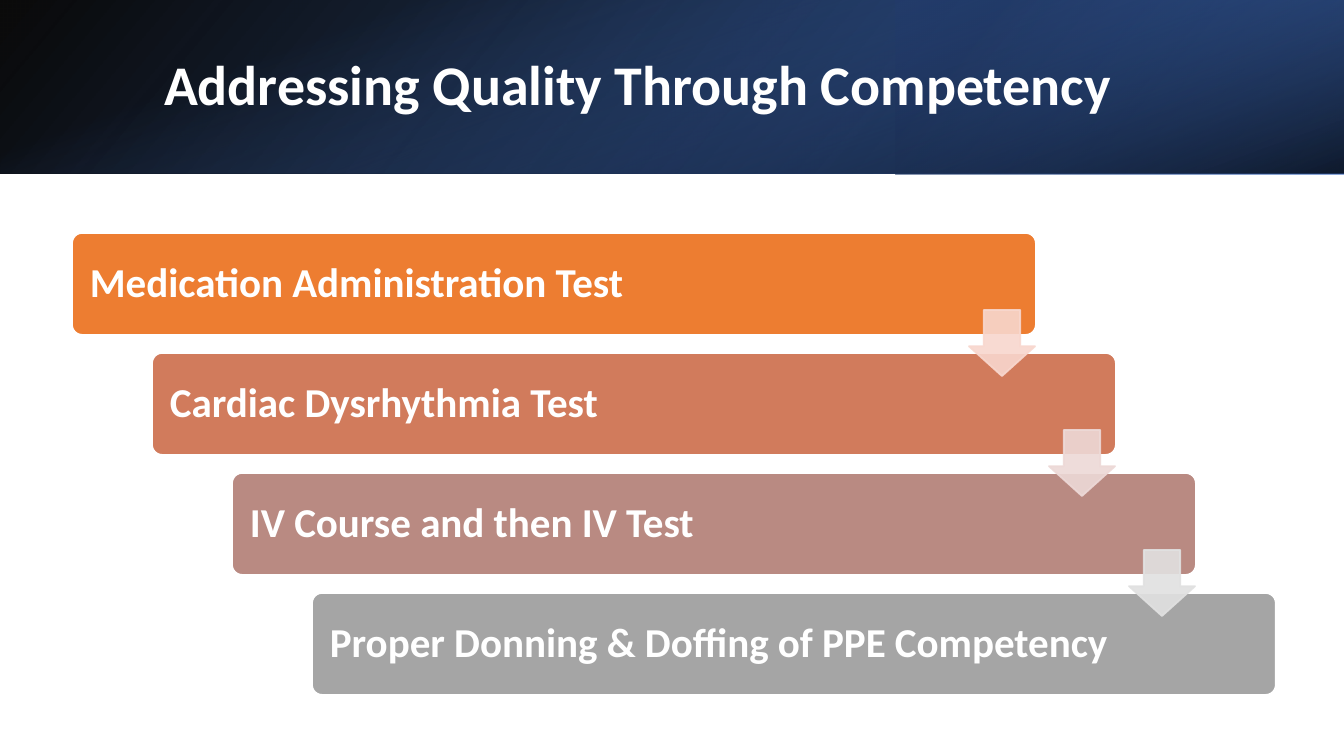
"""Build the slide on quality through competency: a gradient header and four stepped bars."""
from lxml.etree import SubElement
from pptx import Presentation
from pptx.dml.color import RGBColor
from pptx.enum.shapes import MSO_SHAPE as Preset
from pptx.enum.text import MSO_ANCHOR as Anchor, MSO_AUTO_SIZE as AutoSize, PP_ALIGN as Align
from pptx.oxml.ns import qn
from pptx.util import Emu, Pt

EMU_PER_PX = 914400 / 134.4
WHITE = RGBColor(0xFF, 0xFF, 0xFF)
BLACK = RGBColor(0x00, 0x00, 0x00)
DEEP_BLUE = RGBColor(0x2F, 0x55, 0x97)
NAVY = RGBColor(0x20, 0x38, 0x64)
BLUE = RGBColor(0x44, 0x72, 0xC4)
ORANGE = RGBColor(0xED, 0x7D, 0x31)
CORAL = RGBColor(0xD1, 0x7B, 0x5C)
ROSE = RGBColor(0xB9, 0x8A, 0x82)
GREY = RGBColor(0xA5, 0xA5, 0xA5)
PALE_CORAL = RGBColor(0xF8, 0xD7, 0xCE)
PALE_ROSE = RGBColor(0xED, 0xD9, 0xD7)
PALE_GREY = RGBColor(0xE1, 0xE1, 0xE1)

STEPS = [
    ("Medication Administration Test", ORANGE, PALE_CORAL),
    ("Cardiac Dysrhythmia Test", CORAL, PALE_ROSE),
    ("IV Course and then IV Test", ROSE, PALE_GREY),
    ("Proper Donning & Doffing of PPE Competency", GREY, None),
]


def px(value):
    return Emu(round(value * EMU_PER_PX))


def set_all(target, values):
    for name, value in values.items():
        setattr(target, name, value)


class SlideBuilder:
    """Hold the text style and the current slide."""

    font = {"name": "Calibri", "bold": True}

    def __init__(self, slide):
        self.slide = slide

    def label(self, shape, text, size, inset):
        frame = shape.text_frame
        set_all(frame, {"word_wrap": True, "auto_size": AutoSize.NONE,
                        "vertical_anchor": Anchor.MIDDLE,
                        "margin_left": px(inset), "margin_right": px(inset)})
        paragraph = frame.paragraphs[0]
        set_all(paragraph, {"text": text, "alignment": Align.LEFT, "line_spacing": 0.9})
        font = paragraph.runs[0].font
        set_all(font, {**self.font, "size": Pt(size)})
        font.color.rgb = WHITE

    def title(self, box, text):
        title = self.slide.shapes.title
        set_all(title, dict(zip(("left", "top", "width", "height"), map(px, box))))
        self.label(title, text, 30, 13)
        self.slide.shapes.element.append(title.element)

    def shape(self, preset, box, adjustments=()):
        shape = self.slide.shapes.add_shape(preset, *map(px, box))
        shape.shadow.inherit = False
        for index, value in enumerate(adjustments):
            shape.adjustments[index] = value
        return shape

    def set_alpha(self, shape, percents):
        colors = shape.element.spPr.iter(qn("a:srgbClr"))
        for color, percent in zip(colors, percents):
            SubElement(color, qn("a:alpha")).set("val", str(percent * 1000))

    def gradient(self, box, stops, angle, rotation=0, flip=False):
        shape = self.shape(Preset.RECTANGLE, box)
        shape.rotation = rotation
        if flip:
            shape.element.spPr.find(qn("a:xfrm")).set("flipH", "1")
        shape.line.fill.background()
        shape.fill.gradient()
        shape.fill.gradient_angle = angle
        for stop, (position, color, _) in zip(shape.fill.gradient_stops, stops):
            stop.position = position
            stop.color.rgb = color
        self.set_alpha(shape, [alpha for _, _, alpha in stops])

    def solid(self, preset, box, adjustments, fill, line):
        shape = self.shape(preset, box, adjustments)
        shape.fill.solid()
        shape.fill.fore_color.rgb = fill
        shape.line.color.rgb = line
        shape.line.width = Pt(1)
        return shape

    def bar(self, box, text, color):
        bar = self.solid(Preset.ROUNDED_RECTANGLE, box, (0.1,), color, WHITE)
        self.label(bar, text, 22, 15)

    def arrow(self, box, color):
        arrow = self.solid(Preset.DOWN_ARROW, box, (0.55, 0.45), color, color)
        self.set_alpha(arrow, (90, 90))


def main():
    presentation = Presentation()
    set_all(presentation, {"slide_width": px(1344), "slide_height": px(756)})
    builder = SlideBuilder(presentation.slides.add_slide(presentation.slide_layouts[5]))

    builder.gradient((0, 0, 1344, 174), [(0, BLACK, 96), (1, DEEP_BLUE, 100)], 220, flip=True)
    builder.gradient((896, 0, 448, 174), [(0.19, NAVY, 68), (1, BLUE, 79)], 40, 180, flip=True)
    builder.gradient((585, -585, 174, 1344), [(0.23, BLUE, 0), (0.99, BLACK, 74)], 20, 90)
    builder.title((151, 39, 1107, 97), "Addressing Quality Through Competency")

    places = [(72 + 80 * index, 233 + 120 * index) for index in range(len(STEPS))]
    for (left, top), (text, color, _) in zip(places, STEPS):
        builder.bar((left, top, 964, 102), text, color)
    for (left, top), (_, _, color) in zip(places, STEPS[:-1]):
        builder.arrow((left + 897, top + 77, 66, 66), color)

    presentation.save("out.pptx")


if __name__ == "__main__":
    main()
